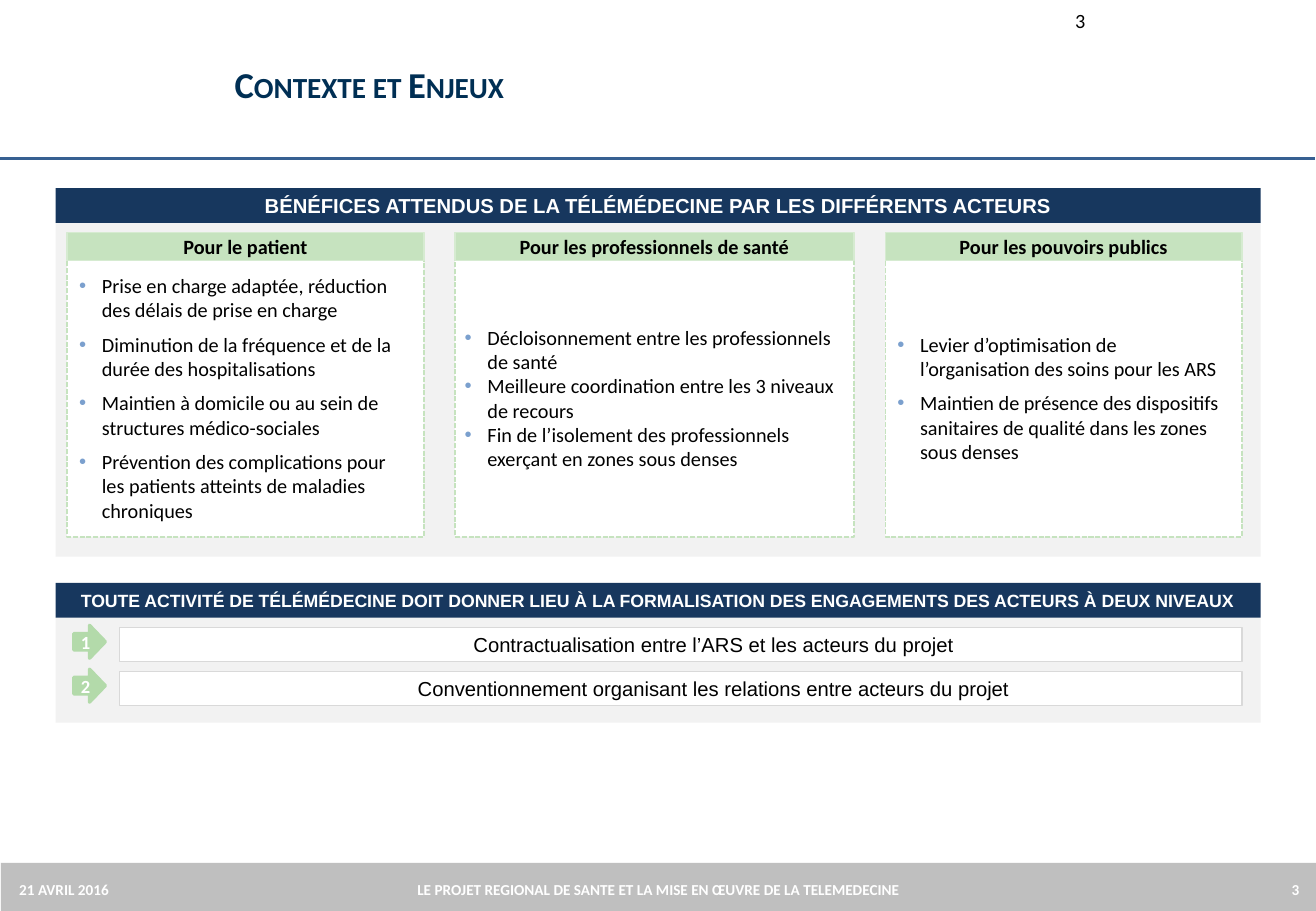
from lxml import etree
from pptx import Presentation
from pptx.dml.color import RGBColor
from pptx.enum.dml import MSO_LINE
from pptx.enum.shapes import MSO_CONNECTOR, MSO_SHAPE
from pptx.enum.text import MSO_ANCHOR, PP_ALIGN
from pptx.oxml.ns import qn
from pptx.util import Pt

RECT = MSO_SHAPE.RECTANGLE
ARROW = MSO_SHAPE.RIGHT_ARROW
LEFT, CENTER, RIGHT = PP_ALIGN.LEFT, PP_ALIGN.CENTER, PP_ALIGN.RIGHT
MIDDLE, TOP = MSO_ANCHOR.MIDDLE, MSO_ANCHOR.TOP
DASH = MSO_LINE.SQUARE_DOT
STRAIGHT = MSO_CONNECTOR.STRAIGHT

WHITE = RGBColor(0xFF, 0xFF, 0xFF)
BLACK = RGBColor(0x00, 0x00, 0x00)
NAVY = RGBColor(0x17, 0x37, 0x5E)
INK = RGBColor(0x00, 0x2F, 0x54)
BLUE = RGBColor(0x37, 0x60, 0x92)
GRAY = RGBColor(0xBF, 0xBF, 0xBF)
PALE = RGBColor(0xF2, 0xF2, 0xF2)
EDGE = RGBColor(0xD9, 0xD9, 0xD9)
GREEN = RGBColor(0xC6, 0xE3, 0xBF)
MINT = RGBColor(0xD6, 0xEB, 0xD1)
LEAF = RGBColor(0xB3, 0xDA, 0xAA)
DOT = RGBColor(0x7B, 0xA0, 0xCE)

deck = Presentation()
deck.slide_width, deck.slide_height = Pt(779.76), Pt(540)
slide = deck.slides.add_slide(deck.slide_layouts[5])
shapes = slide.shapes


def draw(kind, left, top, width, height, fill, edge=None, weight=1):
    shape = shapes.add_shape(kind, Pt(left), Pt(top), Pt(width), Pt(height))
    shape.shadow.inherit = False
    shape.fill.solid()
    shape.fill.fore_color.rgb = fill
    if edge is None:
        shape.line.fill.background()
    else:
        shape.line.color.rgb = edge
        shape.line.width = Pt(weight)
    return shape


def write(shape, lines, size, color, bold=False, align=CENTER,
          font="Calibri", anchor=MIDDLE, sides=(7.2, 7.2), after=0,
          bullet=False, indent=0):
    frame = shape.text_frame
    frame.word_wrap = True
    frame.vertical_anchor = anchor
    frame.margin_left, frame.margin_right = Pt(sides[0]), Pt(sides[1])
    frame.text = "\n".join(lines)
    for para in frame.paragraphs:
        para.alignment = align
        para.space_after = Pt(after)
        props = para._p.get_or_add_pPr()
        if indent:
            props.set("marL", str(Pt(indent)))
        if bullet:
            props.set("indent", str(-Pt(indent)))
            tint = etree.SubElement(props, qn("a:buClr"))
            etree.SubElement(tint, qn("a:srgbClr")).set("val", str(DOT))
            etree.SubElement(props, qn("a:buFont")).set("typeface", "Arial")
            etree.SubElement(props, qn("a:buChar")).set("char", "•")
        for run in para.runs:
            run.font.name = font
            run.font.size = Pt(size)
            run.font.bold = bold
            run.font.color.rgb = color


draw(RECT, 0.5, 511.5, 779.26, 28.5, GRAY)
rule = shapes.add_connector(STRAIGHT, 0, Pt(94), Pt(779), Pt(94))
rule.line.color.rgb = BLUE
rule.line.width = Pt(1.75)
etree.SubElement(rule._element.spPr, qn("a:effectLst"))

title = shapes.title
title.left, title.top = Pt(131.8), Pt(10)
title.width, title.height = Pt(609), Pt(80)
write(title, ["Contexte et Enjeux"], 21.6, INK, True, LEFT)
title.text_frame.paragraphs[0].runs[0].font._element.set("cap", "small")

bands = [
    (111.5, 131.5, 198.5, 12,
     "BÉNÉFICES ATTENDUS DE LA TÉLÉMÉDECINE PAR LES DIFFÉRENTS ACTEURS"),
    (345.5, 365.8, 62.6, 10.5,
     "TOUTE ACTIVITÉ DE TÉLÉMÉDECINE DOIT DONNER LIEU À LA FORMALISATION "
     "DES ENGAGEMENTS DES ACTEURS À DEUX NIVEAUX"),
]
for top, base, height, size, text in bands:
    draw(RECT, 33, base, 714, height, PALE)
    bar = draw(RECT, 33, top, 714, 20.7, NAVY)
    write(bar, [text], size, WHITE, True, font="Arial")

columns = [
    (39.8, 211.3, 7.2, 7.2, 6, "Pour le patient", [
        "Prise en charge adaptée, réduction des délais de prise en charge",
        "Diminution de la fréquence et de la durée des hospitalisations",
        "Maintien à domicile ou au sein de structures médico-sociales",
        "Prévention des complications pour les patients atteints de maladies "
        "chroniques"]),
    (269.7, 236.3, 5.7, 2.8, 0, "Pour les professionnels de santé", [
        "Décloisonnement entre les professionnels de santé",
        "Meilleure coordination entre les 3 niveaux de recours",
        "Fin de l’isolement des professionnels exerçant en zones sous "
        "denses"]),
    (524.6, 211.3, 7.2, 7.2, 6, "Pour les pouvoirs publics", [
        "Levier d’optimisation de l’organisation des soins pour les ARS",
        "Maintien de présence des dispositifs sanitaires de qualité dans les "
        "zones sous denses"]),
]
for left, width, near, far, after, name, points in columns:
    body = draw(RECT, left, 153.5, width, 164.7, WHITE, GREEN)
    body.line.dash_style = DASH
    write(body, points, 12, BLACK, align=LEFT, sides=(near, far),
          after=after, bullet=True, indent=13.5)
    head = draw(RECT, left, 137.8, width, 16.6, GREEN, MINT)
    write(head, [name], 12, BLACK, True)

levels = ["Contractualisation entre l’ARS et les acteurs du projet",
          "Conventionnement organisant les relations entre acteurs du projet"]
for row, text in enumerate(levels):
    top = 372 + 26 * row
    field = draw(RECT, 71, top, 665, 20, WHITE, EDGE, 0.75)
    write(field, [text], 12, BLACK, font="Arial", sides=(5.7, 2.8), indent=36)
    arrow = draw(ARROW, 43.7, top - 1.3, 18.7, 19.5, LEAF, LEAF, 2)
    write(arrow, [str(row + 1)], 11, WHITE, True, sides=(0, 0))

labels = [
    (630, 1.4, 84, "3", 12, BLACK, False, LEFT, TOP),
    (4.3, 514, 135, "21 AVRIL 2016", 9, WHITE, True, LEFT, MIDDLE),
    (176.4, 514, 427,
     "LE PROJET REGIONAL DE SANTE ET LA MISE EN ŒUVRE DE LA TELEMEDECINE",
     9, WHITE, True, CENTER, MIDDLE),
    (737.3, 514, 39.6, "3", 9, WHITE, True, RIGHT, MIDDLE),
]
for left, top, width, text, size, color, bold, align, anchor in labels:
    label = shapes.add_textbox(Pt(left), Pt(top), Pt(width), Pt(26))
    write(label, [text], size, color, bold, align, anchor=anchor)

deck.save("out.pptx")
